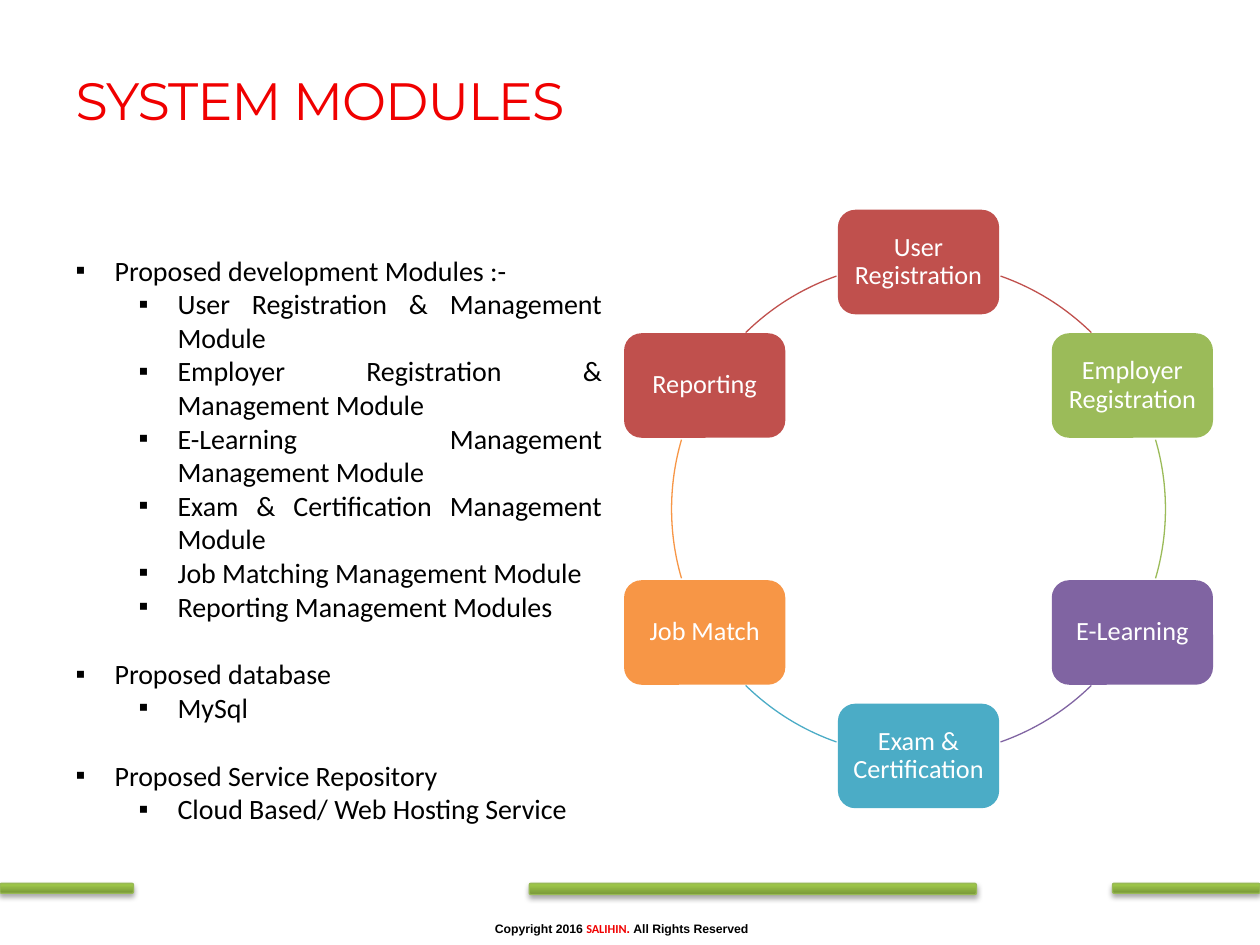
import math

from lxml import etree
from pptx import Presentation, util as u
from pptx.dml.color import RGBColor
from pptx.enum import shapes, text
from pptx.oxml.ns import qn

# Content
COLORS = {"red": "F00000", "black": "000000", "white": "FFFFFF",
          "bar_dark": "779737", "bar_light": "9BC348", "bar_line": "98B955"}
TITLE = "SYSTEM MODULES"
OUTLINE = [
    ("Proposed development Modules :-", [
        "User Registration & Management Module",
        "Employer Registration & Management Module",
        "E-Learning Management Management Module",
        "Exam & Certification Management Module",
        "Job Matching Management Module",
        "Reporting Management Modules"]),
    ("Proposed database", ["MySql"]),
    ("Proposed Service Repository", ["Cloud Based/ Web Hosting Service"]),
]
# Clockwise from the top: label, colour, start and end angle of the next arc
CYCLE = [
    ("User Registration", "C0504D", 289.4, 314.4),
    ("Employer Registration", "9BBB59", 343.7, 16.3),
    ("E-Learning", "8064A2", 45.6, 70.6),
    ("Exam & Certification", "4BACC6", 109.4, 134.4),
    ("Job Match", "F79646", 163.7, 196.3),
    ("Reporting", "C0504D", 225.6, 250.6),
]
COPYRIGHT = [("Copyright 2016 ", "Arial", "black"), ("SALIHIN", "Calibri", "red"),
             (". ", "Arial", "red"), ("All Rights Reserved", "Arial", "black")]

# Layout in inches
CENTER_X, CENTER_Y, RADIUS = 7.29, 4.04, 1.96
BOX_W, BOX_H, BOX_MARGIN = 1.28, 0.83, 0.05
BAR_TOP = 7.01
BARS = [(0, 1.06, 0.08), (8.83, 1.17, 0.08), (4.2, 3.55, 0.09)]  # left, width, height


def rgb(value):
    return RGBColor.from_string(COLORS.get(value, value))


def style(r, size, font, color, bold=False):
    r.font.size, r.font.name, r.font.bold = u.Pt(size), font, bold
    r.font.color.rgb = rgb(color)


def place(sp, left, top, width, height):
    sp.left, sp.top, sp.width, sp.height = map(u.Inches, (left, top, width, height))


def add_shape(kind, left, top, width, height):
    sp = slide.shapes.add_shape(kind, *map(u.Inches, (left, top, width, height)))
    sp.shadow.inherit = False
    return sp


def add_item(tf, words, level, gap):
    p = tf.paragraphs[0] if not tf.text else tf.add_paragraph()
    p.text, p.level = words, level
    p.alignment = text.PP_ALIGN.JUSTIFY
    p.space_before, p.space_after = u.Pt(gap), u.Pt(0)
    pPr = p._p.get_or_add_pPr()
    pPr.set("marL", str(u.Inches(0.31 + 0.5 * level)))
    pPr.set("indent", str(u.Inches(-0.31)))
    etree.SubElement(pPr, qn("a:buFont")).set("typeface", "Arial")
    etree.SubElement(pPr, qn("a:buChar")).set("char", "▪")
    style(p.runs[0], 16, "Calibri", "black")


def add_bar(left, width, height):
    sp = add_shape(shapes.MSO_SHAPE.ROUNDED_RECTANGLE, left, BAR_TOP, width, height)
    sp.fill.gradient()
    sp.fill.gradient_angle = 90
    dark, light = sp.fill.gradient_stops
    dark.color.rgb, light.color.rgb = rgb("bar_dark"), rgb("bar_light")
    light.position = 0.8
    sp.line.color.rgb, sp.line.width = rgb("bar_line"), u.Pt(0.75)
    effects = sp._element.spPr.find(qn("a:effectLst"))
    shadow = etree.SubElement(effects, qn("a:outerShdw"), blurRad=str(u.Pt(3.1)),
                              dist=str(u.Pt(1.8)), dir="5400000", rotWithShape="0")
    color = etree.SubElement(shadow, qn("a:srgbClr"), val=COLORS["black"])
    etree.SubElement(color, qn("a:alpha"), val="35000")


def add_module(index, label, color, start, end):
    angle = math.radians(60 * index - 90)
    x = CENTER_X + RADIUS * math.cos(angle)
    y = CENTER_Y + RADIUS * math.sin(angle)
    sp = add_shape(shapes.MSO_SHAPE.ROUNDED_RECTANGLE,
                   x - BOX_W / 2, y - BOX_H / 2, BOX_W, BOX_H)
    sp.fill.solid()
    sp.fill.fore_color.rgb = rgb(color)
    sp.line.fill.background()
    tf = sp.text_frame
    tf.text, tf.word_wrap = label, True
    tf.margin_left = tf.margin_right = u.Inches(BOX_MARGIN)
    tf.margin_top = tf.margin_bottom = u.Inches(BOX_MARGIN)
    tf.vertical_anchor = text.MSO_ANCHOR.MIDDLE
    p = tf.paragraphs[0]
    p.alignment, p.line_spacing = text.PP_ALIGN.CENTER, 0.9
    style(p.runs[0], 15, "Calibri", "white")

    arc = add_shape(shapes.MSO_SHAPE.ARC, CENTER_X - RADIUS, CENTER_Y - RADIUS,
                    2 * RADIUS, 2 * RADIUS)
    # Angles are stored in 60000ths of a degree, adjustments in 100000ths
    arc.adjustments[0], arc.adjustments[1] = start * 0.6, end * 0.6
    arc.fill.background()
    arc.line.color.rgb, arc.line.width = rgb(color), u.Pt(0.75)


prs = Presentation()
prs.slide_width, prs.slide_height = u.Inches(10), u.Inches(7.5)
slide = prs.slides.add_slide(prs.slide_layouts[1])
title, body = slide.placeholders

# Footer
for bar in BARS:
    add_bar(*bar)
footer = slide.shapes.add_textbox(*map(u.Inches, (3.83, 7.26, 4.2, 0.22)))
footer.text_frame.word_wrap = True
for words, font, color in COPYRIGHT:
    r = footer.text_frame.paragraphs[0].add_run()
    r.text = words
    style(r, 7, font, color, bold=True)

# Title
place(title, 0.5, 0.17, 7.08, 0.92)
tf = title.text_frame
tf.text = TITLE
tf.auto_size = text.MSO_AUTO_SIZE.NONE
tf.vertical_anchor = text.MSO_ANCHOR.BOTTOM
tf.paragraphs[0].alignment = text.PP_ALIGN.LEFT
r = tf.paragraphs[0].runs[0]
style(r, 30, "Montserrat", "red")
r.font._element.set("spc", "-60")

# Module cycle
for i, module in enumerate(CYCLE):
    add_module(i, *module)

# Outline
place(body, 0.5, 1.96, 4.38, 4.68)
body.text_frame.auto_size = text.MSO_AUTO_SIZE.NONE
for i, (heading, items) in enumerate(OUTLINE):
    add_item(body.text_frame, heading, 0, 19.5 if i else 0)
    for item in items:
        add_item(body.text_frame, item, 1, 0)

prs.save("out.pptx")
